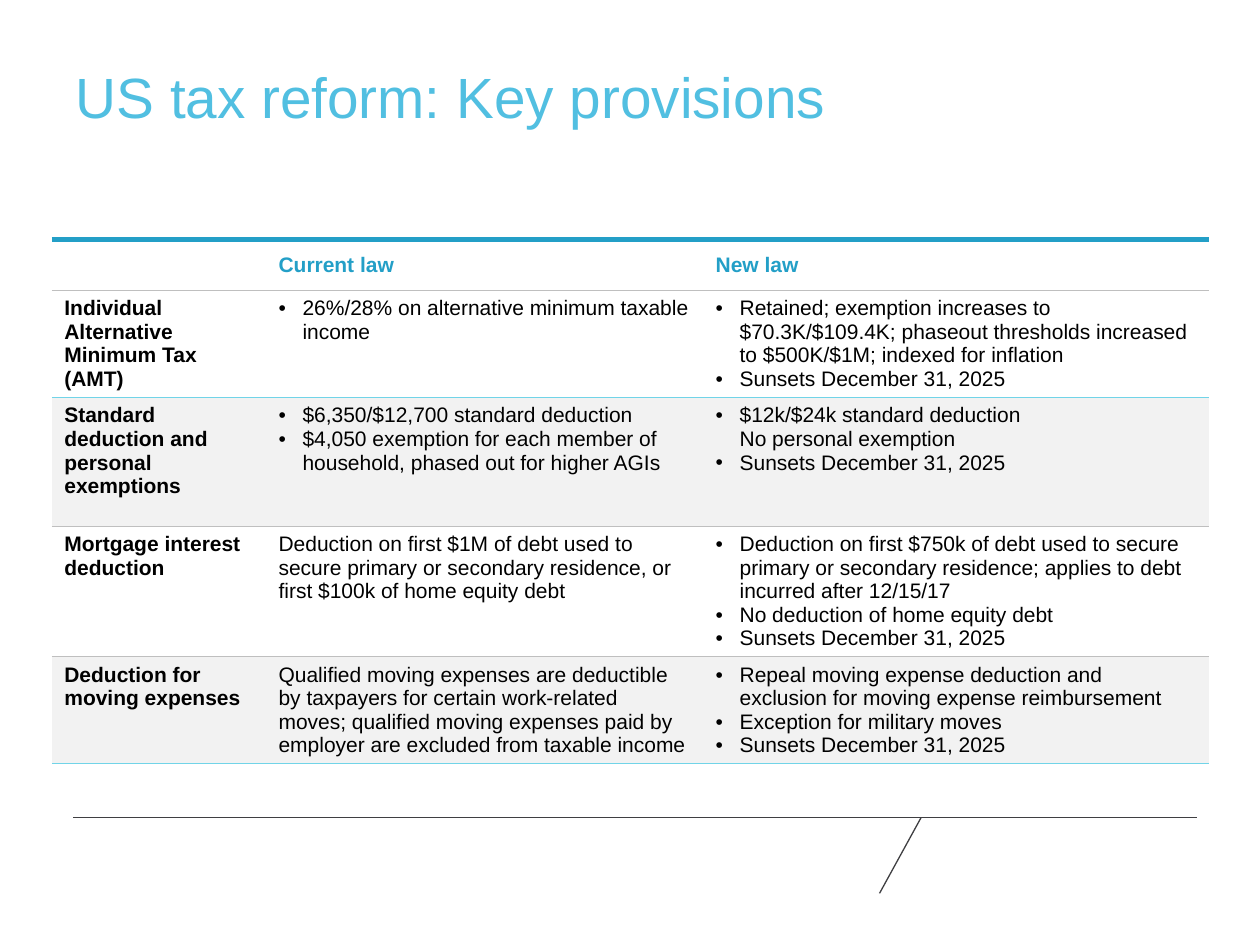
from lxml import etree
from pptx import Presentation
from pptx.dml.color import RGBColor
from pptx.enum.shapes import MSO_CONNECTOR
from pptx.enum.text import MSO_ANCHOR, MSO_AUTO_SIZE, PP_ALIGN
from pptx.oxml.ns import qn
from pptx.util import Pt

SKY = RGBColor(0x51, 0xBF, 0xE1)
BLUE = RGBColor(0x23, 0x9F, 0xC7)
AQUA = RGBColor(0x71, 0xD4, 0xE8)
SILVER = RGBColor(0xBF, 0xBF, 0xBF)
DARK = RGBColor(0x3F, 0x3F, 0x42)
BLACK = RGBColor(0, 0, 0)
WHITE = RGBColor(0xFF, 0xFF, 0xFF)
PALE = RGBColor(0xF2, 0xF2, 0xF2)

NO_STYLE = "{2D5ABB26-0587-4C30-8999-92F81FD0307C}"
SUNSET = "• Sunsets December 31, 2025"
ROWS = [
    ("", ["Current law"], ["New law"]),
    ("Individual Alternative Minimum Tax (AMT)",
     ["• 26%/28% on alternative minimum taxable income"],
     ["• Retained; exemption increases to $70.3K/$109.4K; phaseout thresholds "
      "increased to $500K/$1M; indexed for inflation", SUNSET]),
    ("Standard deduction and personal exemptions",
     ["• $6,350/$12,700 standard deduction",
      "• $4,050 exemption for each member of household, phased out for higher AGIs"],
     ["• $12k/$24k standard deduction\vNo personal exemption", SUNSET]),
    ("Mortgage interest deduction",
     ["Deduction on first $1M of debt used to secure primary or secondary "
      "residence, or first $100k of home equity debt"],
     ["• Deduction on first $750k of debt used to secure primary or secondary "
      "residence; applies to debt incurred after 12/15/17",
      "• No deduction of home equity debt", SUNSET]),
    ("Deduction for moving expenses",
     ["Qualified moving expenses are deductible by taxpayers for certain "
      "work-related moves; qualified moving expenses paid by employer are "
      "excluded from taxable income"],
     ["• Repeal moving expense deduction and exclusion for moving expense "
      "reimbursement", "• Exception for military moves", SUNSET]),
]
COL_WIDTHS = [122.4, 249.8, 288.8]
ROW_HEIGHTS = [28.8, 61.2, 73.7, 74.2, 61.2]
RULES = [(BLUE, 3), (SILVER, 0.5), (AQUA, 0.5), (SILVER, 0.5), (SILVER, 0.5), (AQUA, 0.5)]


def add_border(cell, side, color, width):
    ln = etree.SubElement(cell._tc.get_or_add_tcPr(), qn(f"a:ln{side}"), w=str(Pt(width)))
    fill = etree.SubElement(ln, qn("a:solidFill"))
    etree.SubElement(fill, qn("a:srgbClr"), val=str(color))


def set_bullet(p):
    pPr = p._p.get_or_add_pPr()
    pPr.set("marL", str(Pt(13.68)))
    pPr.set("indent", str(Pt(-13.68)))
    etree.SubElement(pPr, qn("a:buFont"), typeface="Arial")
    etree.SubElement(pPr, qn("a:buChar"), char="•")


prs = Presentation()
prs.slide_width, prs.slide_height = Pt(720), Pt(540)
s = prs.slides.add_slide(prs.slide_layouts[5])

for x1, y1, x2, y2 in [(41.8, 467.3, 684, 467.3), (502.6, 510.5, 526.3, 467.3)]:
    line = s.shapes.add_connector(MSO_CONNECTOR.STRAIGHT, Pt(x1), Pt(y1), Pt(x2), Pt(y2))
    line.line.color.rgb = DARK
    line.line.width = Pt(0.75)
    etree.SubElement(line._element.spPr, qn("a:effectLst"))

title = s.shapes.title
title.left, title.top, title.width, title.height = Pt(36), Pt(36), Pt(462.2), Pt(119.5)
tf = title.text_frame
tf.text = "US tax reform: Key provisions"
tf.word_wrap = True
tf.auto_size = MSO_AUTO_SIZE.NONE
tf.vertical_anchor = MSO_ANCHOR.TOP
p = tf.paragraphs[0]
p.alignment = PP_ALIGN.LEFT
p.line_spacing = 0.9
font = p.runs[0].font
font.name, font.size, font.color.rgb = "Arial", Pt(32.4), SKY

frame = s.shapes.add_table(len(ROWS), len(COL_WIDTHS), Pt(29.6), Pt(136.8),
                           Pt(sum(COL_WIDTHS)), Pt(sum(ROW_HEIGHTS)))
table = frame.table
table.first_row = table.horz_banding = False
table._tbl.tblPr.find(qn("a:tableStyleId")).text = NO_STYLE
for col, width in zip(table.columns, COL_WIDTHS):
    col.width = Pt(width)

for i, (label, current, new) in enumerate(ROWS):
    table.rows[i].height = Pt(ROW_HEIGHTS[i])
    for j, items in enumerate([[label], current, new]):
        cell = table.cell(i, j)
        add_border(cell, "T", *RULES[i])
        add_border(cell, "B", *RULES[i + 1])
        cell.fill.solid()
        cell.fill.fore_color.rgb = PALE if i in (2, 4) else WHITE
        cell.vertical_anchor = MSO_ANCHOR.MIDDLE if i == 0 else MSO_ANCHOR.TOP
        tf = cell.text_frame
        for k, item in enumerate(items):
            p = tf.paragraphs[0] if k == 0 else tf.add_paragraph()
            if item.startswith("• "):
                set_bullet(p)
            p.text = item.removeprefix("• ")
            for r in p.runs:
                r.font.name = "Arial"
                r.font.size = Pt(12)
                r.font.bold = i == 0 or j == 0
                r.font.color.rgb = BLUE if i == 0 else BLACK

prs.save("out.pptx")
